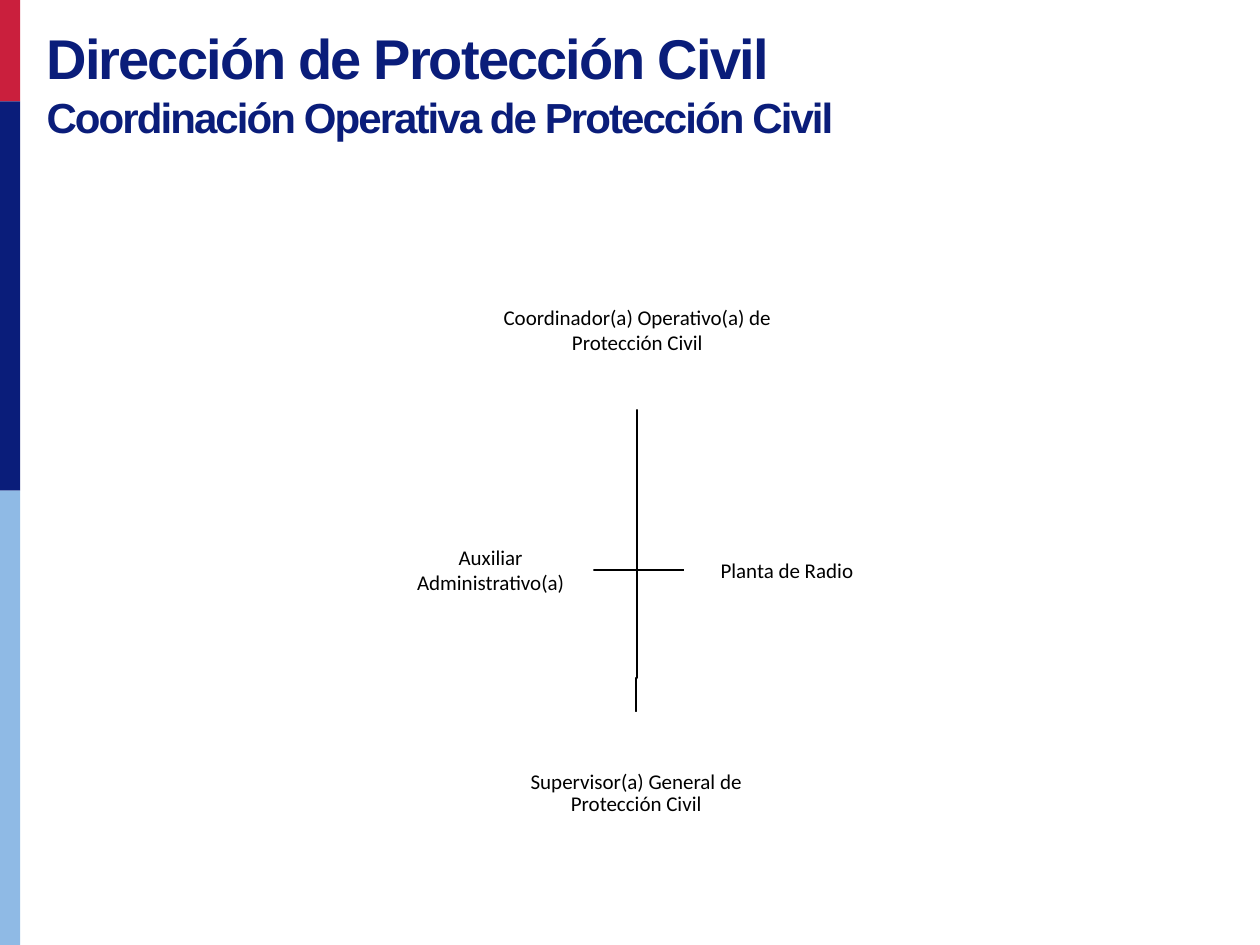
from copy import deepcopy
from dataclasses import dataclass

from pptx import Presentation
from pptx.dml.color import RGBColor
from pptx.enum import shapes, text
from pptx.oxml import ns
from pptx.util import Pt


@dataclass(frozen=True)
class Theme:
    navy: str = "0A1D7A"
    red: str = "CA1F3D"
    sky: str = "8FBAE5"
    black: str = "000000"
    white: str = "FFFFFF"
    title: int = 32
    subtitle: int = 24
    label: int = 12
    heading_font: str = "Arial"
    body_font: str = "Calibri"


T = Theme()


def write(p, content, size=T.label, font=T.body_font, color=T.black, bold=False,
          align=text.PP_ALIGN.CENTER, line=None, after=None, tracking=None):
    """Fill a paragraph; a newline in the content becomes a line break."""
    p.text = content
    p.alignment = align
    if line is not None:
        p.line_spacing = line
    if after is not None:
        p.space_after = Pt(after)
    for r in p.runs:
        r.font.size, r.font.name, r.font.bold = Pt(size), font, bold
        r.font.color.rgb = RGBColor.from_string(color)
        if tracking is not None:
            r.font._element.set("spc", str(round(tracking * 100)))
    # Line breaks take the format of the text around them
    for br in p._p.findall(ns.qn("a:br")):
        br.append(deepcopy(p.runs[0].font._element))


def add_rect(s, left, top, width, height, color):
    sp = s.shapes.add_shape(shapes.MSO_SHAPE.RECTANGLE,
                            Pt(left), Pt(top), Pt(width), Pt(height))
    sp.shadow.inherit = False
    sp.fill.solid()
    sp.fill.fore_color.rgb = RGBColor.from_string(color)
    sp.line.fill.background()
    return sp


def add_post(s, content, left, top, width, height, **fmt):
    """A post of the chart: white box with a centred label."""
    tf = add_rect(s, left, top, width, height, T.white).text_frame
    tf.word_wrap = True
    tf.vertical_anchor = text.MSO_ANCHOR.MIDDLE
    tf.margin_left = tf.margin_right = tf.margin_top = tf.margin_bottom = Pt(0.7)
    write(tf.paragraphs[0], content, **fmt)


def add_branch(s, *points):
    """An open angled line through the given points."""
    start, *rest = [(Pt(x), Pt(y)) for x, y in points]
    builder = s.shapes.build_freeform(*start)
    builder.add_line_segments(rest, close=False)
    sp = builder.convert_to_shape()
    sp.shadow.inherit = False
    sp.fill.background()
    sp.line.color.rgb = RGBColor.from_string(T.black)
    sp.line.width = Pt(1)


def add_title(s):
    sp = s.shapes.title
    sp.left, sp.top, sp.width, sp.height = Pt(19.4), Pt(10), Pt(573), Pt(75)
    tf = sp.text_frame
    tf.word_wrap = True
    tf.auto_size = text.MSO_AUTO_SIZE.SHAPE_TO_FIT_TEXT
    tf.vertical_anchor = text.MSO_ANCHOR.TOP
    style = dict(font=T.heading_font, color=T.navy, bold=True,
                 align=text.PP_ALIGN.LEFT, tracking=-1.1)
    write(tf.paragraphs[0], "Dirección de Protección Civil", size=T.title, **style)
    write(tf.add_paragraph(), "Coordinación Operativa de Protección Civil",
          size=T.subtitle, **style)


def add_side_band(s):
    edges = [0, 58, 280.4, 540]
    for top, bottom, color in zip(edges, edges[1:], (T.red, T.navy, T.sky)):
        add_rect(s, 0, top, 11.5, bottom - top, color)


def add_org_chart(s):
    trunk, trunk_top, trunk_end = 364.2, 234, 406.8
    row_top, side_w, side_h = 292.2, 117.4, 67
    row_mid = row_top + side_h / 2
    left_x, right_x = 221.7, 391

    # Branches to the side posts, then the trunk with its small step
    for x in (right_x, left_x + side_w):
        add_branch(s, (trunk, trunk_top), (trunk, row_mid), (x, row_mid))
    add_branch(s, (trunk, trunk_top), (trunk, 387.4),
               (trunk - 0.6, 387.4), (trunk - 0.6, trunk_end))

    # Posts
    add_post(s, "Coordinador(a) Operativo(a) de Protección Civil",
             275, 142.6, 178.4, 91.4)
    add_post(s, "Supervisor(a) General de Protección Civil",
             285.8, trunk_end, 155.6, 93.6, line=0.9, after=4.2)
    for content, x in (("Auxiliar\nAdministrativo(a)", left_x),
                       ("Planta de Radio", right_x)):
        add_post(s, content, x, row_top, side_w, side_h)


def main():
    prs = Presentation()
    prs.slide_width, prs.slide_height = Pt(720), Pt(540)
    s = prs.slides.add_slide(prs.slide_layouts[5])
    add_side_band(s)
    add_title(s)
    add_org_chart(s)
    prs.save("out.pptx")


if __name__ == "__main__":
    main()
